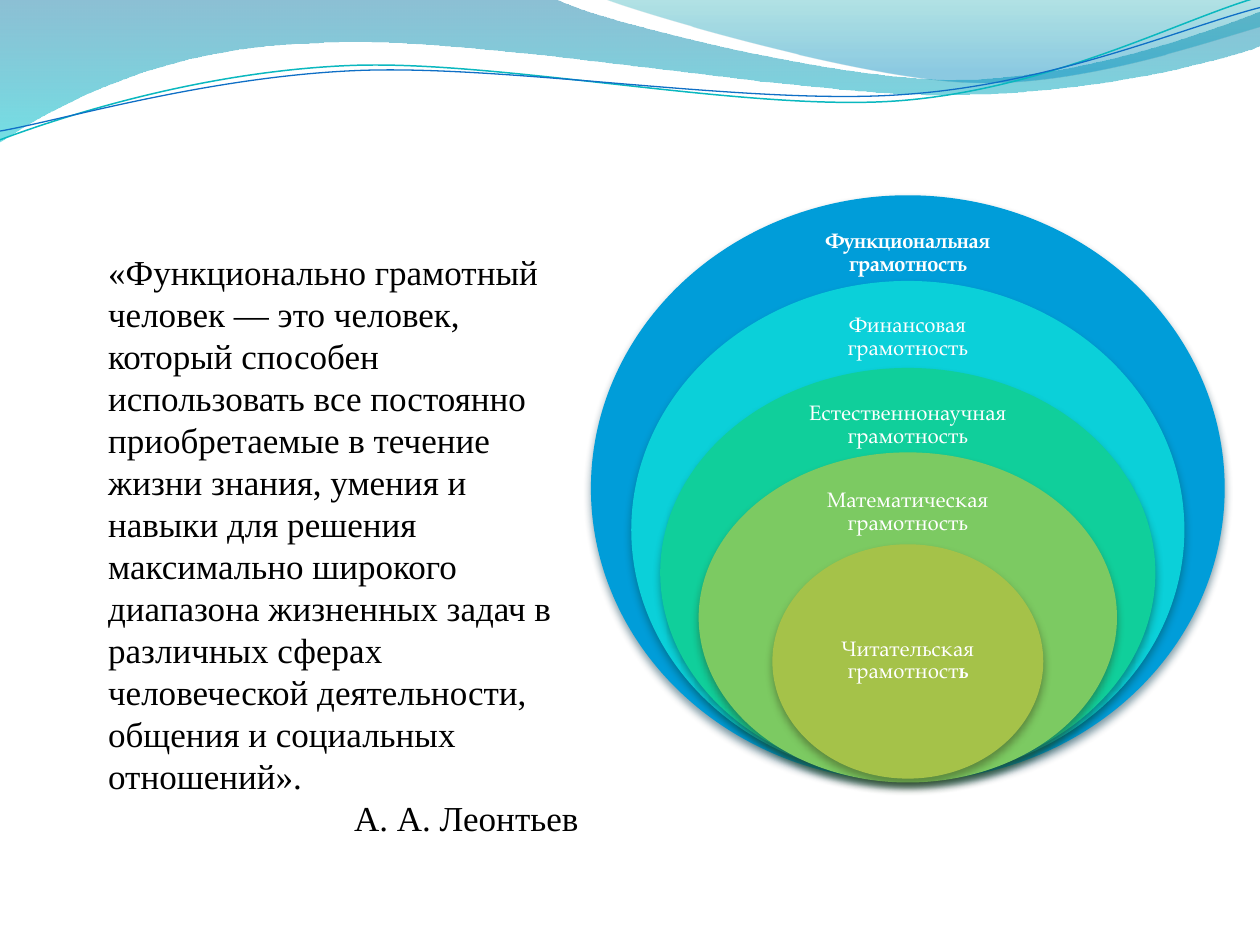
from math import cos, radians, sin
from pptx import Presentation
from pptx.dml.color import RGBColor
from pptx.enum.shapes import MSO_SHAPE
from pptx.enum.text import MSO_ANCHOR, MSO_AUTO_SIZE, PP_ALIGN
from pptx.oxml.ns import qn
from pptx.util import Inches, Pt
from lxml.etree import SubElement

COLS, ROWS = 100, 75
MID = 72.05
TILT = 2.7
HUES = {
    "white": "FFFFFF", "black": "000000",
    "deep": "0074A1", "aqua": "00C6CF", "teal": "00A1A9", "sea": "008BBF",
    "cyan": "0AB8BF", "navy": "0F6FC6",
    "blue": "009DD9", "blue dark": "00374C",
    "sky": "0BD0D9", "sky dark": "024B4E",
    "mint": "10CF9B", "mint dark": "044A37",
    "green": "7CCA62", "green dark": "2B4821",
    "olive": "A5C249", "olive dark": "3A4519",
}

BANDS = [
    ([(0, 0), (44, -0.1),
      (47.6, 1.7, 66.4, 6.3, 75.8, 6.3), (85.3, 6.3, 95.8, 2.6, 100, 0.9),
      (100.1, 3.6),
      (98.3, 4.4, 87, 7.6, 74.6, 7.5), (62.2, 7.5, 38.2, 2.8, 25.7, 3.4),
      (12.9, 3.6, 4.6, 8.3, -0.1, 11.3), (0, 0)],
     [("deep", 0, 45), ("aqua", 100, 55)]),
    ([(47.9, -0.1),
      (50.9, 1.1, 68.2, 6.2, 76.9, 6.5), (85.6, 6.9, 96.1, 3.2, 100, 2.1),
      (100, 0), (47.9, -0.1)],
     [("teal", 0, 30), ("sea", 80, 45)]),
]
WAVES = [
    ([(0, 11.1), (4.8, 9.3, 15.8, 5.7, 27.7, 5.2),
      (39.5, 4.7, 59.3, 8.9, 71.3, 8), (83.3, 7.1, 93.8, 1.5, 99.8, -0.2)],
     (49.9, 5.75), "cyan", 0.85),
    ([(0, 10.4), (4.7, 9.6, 16.4, 6.1, 28.3, 5.6),
      (40.3, 5.1, 59.7, 8.4, 71.7, 7.5), (83.6, 6.7, 94.1, 2.1, 100, 0.6)],
     (49.95, 5.9), "navy", 0.75),
]
RINGS = [
    ("blue", (15.5, 50.3, 46.5), (17.8, 18.9, 4.6),
     [("Функциональная грамотность", True)]),
    ("sky", (22.3, 43.9, 39.5), (24.5, 18.9, 4.5),
     [("Финансовая грамотность", False)]),
    ("mint", (29.2, 39.3, 32.5), (31.5, 20.3, 4.5),
     [("Естественнонаучная грамотность", False)]),
    ("green", (35.9, 33.2, 26.2), (38.3, 17.9, 4.7),
     [("Математическая грамотность", False)]),
    ("olive", (43.2, 21.5, 18.6), (47.8, 15.2, 9.3),
     [("Читательская грамотност", False), ("ь", True)]),
]
QUOTE = ("«Функционально грамотный человек — это человек, который способен "
         "использовать все постоянно приобретаемые в течение жизни знания, "
         "умения и навыки для решения максимально широкого диапазона "
         "жизненных задач в различных сферах человеческой деятельности, "
         "общения и социальных отношений».")


def turn(part, mid):
    c, s = cos(radians(TILT)), sin(radians(TILT))
    out = []
    for x, y in zip(part[::2], part[1::2]):
        dx, dy = x - mid[0], y - mid[1]
        out += [mid[0] + dx * c - dy * s, mid[1] + dx * s + dy * c]
    return out


class Deck:
    label = ("TeX Gyre Pagella", 12, "white")
    prose = ("Times New Roman", 20, "black")

    def __init__(self):
        self.show = Presentation()
        self.show.slide_width, self.show.slide_height = Inches(10), Inches(7.5)
        self.slide = self.show.slides.add_slide(self.show.slide_layouts[6])
        self.shapes = self.slide.shapes

    def group(self):
        self.shapes = self.slide.shapes.add_group_shape().shapes

    def leave(self):
        self.shapes = self.slide.shapes

    def hue(self, name):
        return RGBColor.from_string(HUES[name])

    def box(self, left, top, wide, high):
        col = self.show.slide_width / COLS
        row = self.show.slide_height / ROWS
        return [round(n) for n in (left * col, top * row,
                                   wide * col, high * row)]

    def curve(self, path, closed):
        pts = [self.box(x, y, 0, 0)[:2] for part in path
               for x, y in zip(part[::2], part[1::2])]
        pen = self.shapes.build_freeform(*pts[0])
        pen.add_line_segments(pts[1:], close=closed)
        shape = pen.convert_to_shape()
        shape.shadow.inherit = False
        route = shape.element.xpath(".//a:path")[0]
        legs = iter(route.findall(qn("a:lnTo")))
        for part in path[1:]:
            leg = next(legs)
            if len(part) == 6:
                leg.addprevious(bend := SubElement(route, qn("a:cubicBezTo")))
                for step in (leg, next(legs), next(legs)):
                    bend.append(step[0])
                    route.remove(step)
        return shape

    def band(self, path, stops):
        shape = self.curve(path, True)
        shape.line.fill.background()
        shape.fill.gradient()
        shape.fill.gradient_angle = 270
        nodes = shape.element.xpath(".//a:gs")
        for stop, node, (name, pos, alpha) in zip(
                shape.fill.gradient_stops, nodes, stops):
            stop.color.rgb = self.hue(name)
            node.set("pos", str(pos * 1000))
            SubElement(node[0], qn("a:alpha"), val=str(alpha * 1000))

    def wave(self, path, mid, name, width):
        shape = self.curve([turn(part, mid) for part in path], False)
        shape.rotation = 360 - TILT
        shape.fill.background()
        shape.line.color.rgb = self.hue(name)
        shape.line.width = Pt(width)

    def ring(self, name, top, wide, high):
        shape = self.shapes.add_shape(
            MSO_SHAPE.OVAL, *self.box(MID - wide / 2, top, wide, high))
        shape.fill.solid()
        shape.fill.fore_color.rgb = self.hue(name)
        shape.line.fill.background()
        shape.shadow.inherit = False
        glow = shape.element.xpath("./p:spPr/a:effectLst")[0]
        cast = SubElement(glow, qn("a:outerShdw"), blurRad=str(Pt(4.5)),
                          dist=str(Pt(3)), dir="5400000", rotWithShape="0")
        tint = SubElement(cast, qn("a:srgbClr"), val=HUES[name + " dark"])
        SubElement(tint, qn("a:alpha"), val="48000")

    def text(self, place, paras, style, align, space, inset=None, indent=0):
        frame = self.shapes.add_textbox(*self.box(*place)).text_frame
        frame.word_wrap = True
        if inset is None:
            frame.auto_size = MSO_AUTO_SIZE.SHAPE_TO_FIT_TEXT
        else:
            frame.vertical_anchor = MSO_ANCHOR.MIDDLE
            frame.margin_left = frame.margin_right = Inches(inset)
            frame.margin_top = frame.margin_bottom = Inches(inset)
        font, size, name = style
        for i, (runs, side) in enumerate(zip(paras, align)):
            para = frame.add_paragraph() if i else frame.paragraphs[0]
            para.alignment = side
            para.line_spacing = space
            if indent:
                para._p.get_or_add_pPr().set("marL", str(Inches(indent)))
            for words, bold in runs:
                run = para.add_run()
                run.text = words
                run.font.name = font
                run.font.size = Pt(size)
                run.font.bold = bold
                run.font.color.rgb = self.hue(name)


def main():
    deck = Deck()
    for path, stops in BANDS:
        deck.band(path, stops)
    deck.group()
    for wave in WAVES:
        deck.wave(*wave)
    deck.group()
    for name, oval, (top, wide, high), runs in RINGS:
        deck.ring(name, *oval)
        deck.text((MID - wide / 2, top, wide, high), [runs], deck.label,
                  [PP_ALIGN.CENTER], 0.9, inset=0.09)
    deck.leave()
    deck.text((2, 19.4, 44.9, 48.1),
              [[(QUOTE, False)], [("А. А. Леонтьев", False)]], deck.prose,
              [PP_ALIGN.LEFT, PP_ALIGN.RIGHT], Pt(24), indent=0.56)
    deck.show.save("out.pptx")


if __name__ == "__main__":
    main()
